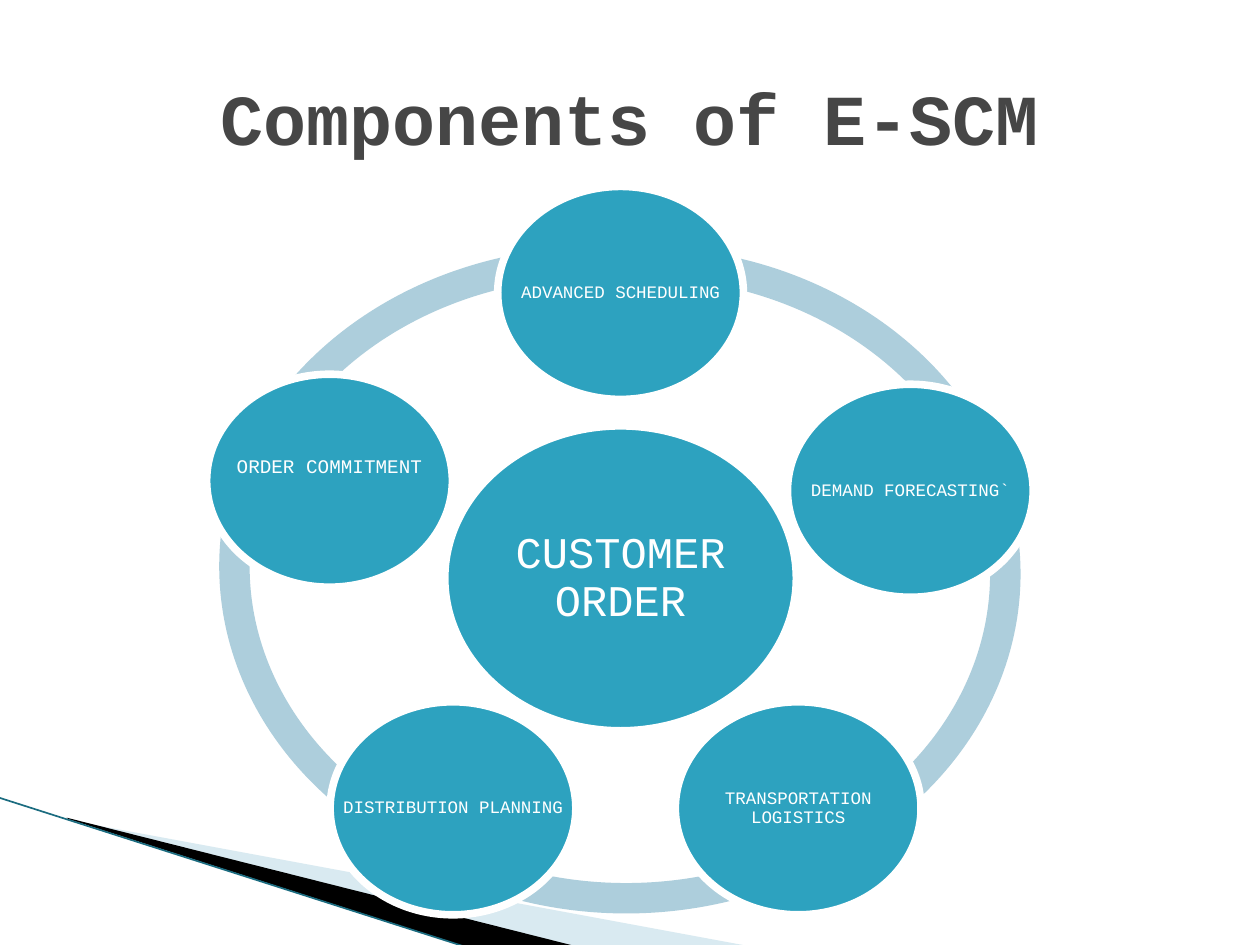
"""Build the Components of E-SCM slide with a ring of five parts around the order."""
from lxml import etree
from pptx import Presentation
from pptx.dml.color import RGBColor
from pptx.enum.shapes import MSO_CONNECTOR, MSO_SHAPE
from pptx.enum.text import MSO_ANCHOR, PP_ALIGN
from pptx.oxml.ns import qn
from pptx.util import Inches, Pt

ARC = MSO_SHAPE.BLOCK_ARC
OVAL = MSO_SHAPE.OVAL
STRAIGHT = MSO_CONNECTOR.STRAIGHT
MIDDLE = MSO_ANCHOR.MIDDLE
CENTER = PP_ALIGN.CENTER
FONT = "Courier New"
HEX = {"teal": "2DA2BF", "ring": "ADCEDC", "pale": "A0CBDC", "edge": "1B6C80",
       "black": "000000", "white": "FFFFFF", "title": "464646"}
COLORS = {name: RGBColor.from_string(code) for name, code in HEX.items()}


def paint(shape, fill, line=None):
    shape.shadow.inherit = False
    shape.fill.solid()
    shape.fill.fore_color.rgb = COLORS[fill]
    if line:
        shape.line.color.rgb = COLORS[line]
        shape.line.width = Pt(4.33)
    else:
        shape.line.fill.background()


def write(shape, text, size, color="white", bold=False, wrap=True, inset=0.01, foot=0.01, spacing=0.9):
    frame = shape.text_frame
    frame.word_wrap = wrap
    frame.vertical_anchor = MIDDLE
    frame.margin_left = frame.margin_right = frame.margin_top = Inches(inset)
    frame.margin_bottom = Inches(foot)
    para = frame.paragraphs[0]
    para.text = text
    para.alignment = CENTER
    para.line_spacing = spacing
    para.font.name = FONT
    para.font.size = Pt(size)
    para.font.bold = bold
    para.font.color.rgb = COLORS[color]


deck = Presentation()
deck.slide_width = Inches(10)
deck.slide_height = Inches(7.5)
slide = deck.slides.add_slide(deck.slide_layouts[6])
shapes = slide.shapes

wedges = [
    ("pale", [(0.55, 6.51), (5.95, 7.51), (4.56, 7.51), (0.55, 6.5)]),
    ("black", [(0.53, 6.49), (4.57, 7.51), (3.72, 7.52), (0.54, 6.5)]),
]
for fill, points in wedges:
    corners = [(Inches(x), Inches(y)) for x, y in points]
    pen = shapes.build_freeform(*corners[0])
    pen.add_line_segments(corners[1:], close=True)
    wedge = pen.convert_to_shape()
    paint(wedge, fill)
    if fill == "pale":
        tint = wedge.fill._xPr.find(qn("a:solidFill"))[0]
        etree.SubElement(tint, qn("a:alpha")).set("val", "40000")

edge = shapes.add_connector(STRAIGHT, Inches(-0.01), Inches(6.33), Inches(3.71), Inches(7.52))
edge.line.color.rgb = COLORS["edge"]
edge.line.width = Pt(0.95)
etree.SubElement(edge._element.spPr, qn("a:effectLst"))

arcs = [
    (1.71, 1.96, 200, 274),
    (1.74, 1.87, 122, 197),
    (1.94, 2, 53, 127),
    (2.04, 1.93, 343, 56),
    (2.05, 1.96, 266, 342),
]
for left, top, start, end in arcs:
    arc = shapes.add_shape(ARC, Inches(left), Inches(top), Inches(6.06), Inches(5.25))
    arc.adjustments[0] = start * 0.6
    arc.adjustments[1] = end * 0.6
    arc.adjustments[2] = 0.046
    paint(arc, "ring")

hub = shapes.add_shape(OVAL, Inches(3.53), Inches(3.38), Inches(2.79), Inches(2.42))
paint(hub, "teal", "white")
write(hub, "CUSTOMER ORDER", 25, inset=0.03, foot=0.03)

parts = [
    (3.95, 1.48, "ADVANCED SCHEDULING", {"size": 10, "wrap": False}),
    (6.25, 3.05, "DEMAND FORECASTING`", {"size": 10, "wrap": False}),
    (5.36, 5.57, "TRANSPORTATION LOGISTICS", {"size": 10}),
    (2.62, 5.57, "DISTRIBUTION PLANNING", {"size": 10, "wrap": False}),
    (1.64, 2.97, "ORDER COMMITMENT", {"size": 11, "wrap": False, "foot": 0.23}),
]
for left, top, label, style in parts:
    part = shapes.add_shape(OVAL, Inches(left), Inches(top), Inches(1.95), Inches(1.69))
    paint(part, "teal", "white")
    write(part, label, **style)

title = shapes.add_textbox(Inches(0.5), Inches(0.3), Inches(9), Inches(1.25))
write(title, "Components of E-SCM", 41, color="title", bold=True, inset=0.05, foot=0.05, spacing=1.0)

deck.save("out.pptx")
